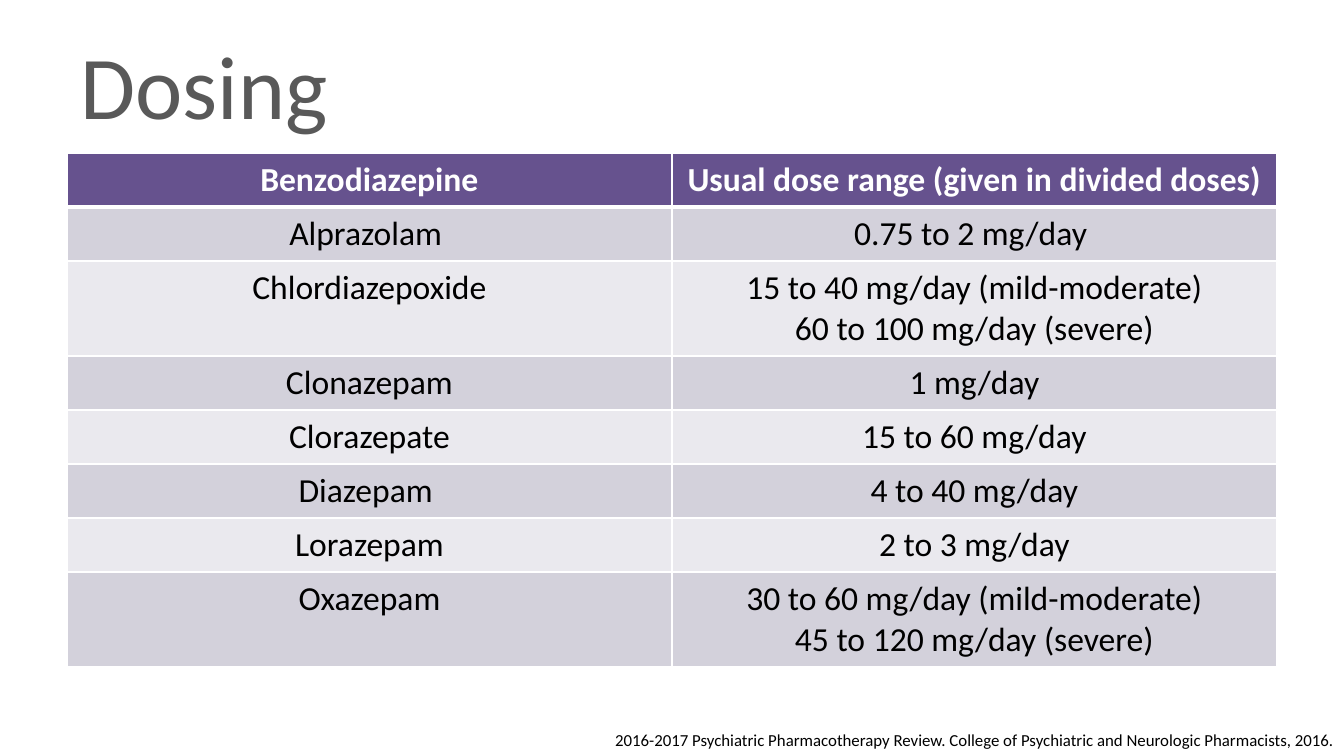
import pptx
import pptx.util
import pptx.dml.color
import pptx.enum.text
import pptx.oxml
import pptx.oxml.ns

RGBColor = pptx.dml.color.RGBColor
WHITE = RGBColor(0xFF, 0xFF, 0xFF)
BLACK = RGBColor(0, 0, 0)
GRAY = RGBColor(0x59, 0x59, 0x59)
PURPLE = RGBColor(0x66, 0x52, 0x8E)
BANDS = RGBColor(0xD3, 0xD1, 0xDB), RGBColor(0xEA, 0xE9, 0xEE)

SCALE = 914400 / 134.4
CENTER = pptx.enum.text.PP_ALIGN.CENTER
BOTTOM = pptx.enum.text.MSO_ANCHOR.BOTTOM
LINE, PAD = 41, 13

DOSES = [
    ("Benzodiazepine", "Usual dose range (given in divided doses)"),
    ("Alprazolam ", "0.75 to 2 mg/day "),
    ("Chlordiazepoxide",
     "15 to 40 mg/day (mild-moderate)\n60 to 100 mg/day (severe)"),
    ("Clonazepam", "1 mg/day"),
    ("Clorazepate", "15 to 60 mg/day"),
    ("Diazepam ", "4 to 40 mg/day"),
    ("Lorazepam", "2 to 3 mg/day"),
    ("Oxazepam",
     "30 to 60 mg/day (mild-moderate)\n45 to 120 mg/day (severe)"),
]
SOURCE = ("2016-2017 Psychiatric Pharmacotherapy Review. "
          "College of Psychiatric and Neurologic Pharmacists, 2016.")


def px(*sizes):
    return [pptx.util.Emu(round(size * SCALE)) for size in sizes]


def apply(target, values):
    for name, value in values.items():
        setattr(target, name, value)


def lines(row):
    """Count the lines of the tallest cell."""
    return max(text.count("\n") + 1 for text in row)


class Deck:
    font = "Calibri"

    def __init__(self, width, height):
        self.file = pptx.Presentation()
        self.file.slide_width, self.file.slide_height = px(width, height)
        self.slide = self.file.slides.add_slide(self.file.slide_layouts[6])

    def fill(self, frame, text, size, color, bold=False, **style):
        """Put styled text into a text frame."""
        frame.text = text
        for para in frame.paragraphs:
            apply(para, style)
            for run in para.runs:
                apply(run.font, {"name": self.font, "bold": bold,
                                 "size": pptx.util.Pt(size)})
                run.font.color.rgb = color

    def text(self, box, text, size, color, frame, **style):
        area = self.slide.shapes.add_textbox(*px(*box)).text_frame
        apply(area, frame)
        self.fill(area, text, size, color, **style)

    def border(self, cell, side, width):
        props = cell._tc.get_or_add_tcPr()
        props.append(pptx.oxml.parse_xml(
            f'<a:ln{side} {pptx.oxml.ns.nsdecls("a")} '
            f'w="{pptx.util.Pt(width)}"><a:solidFill>'
            f'<a:srgbClr val="{WHITE}"/></a:solidFill></a:ln{side}>'))

    def table(self, left, top, width, rows):
        """Add a table with a dark head row and banded body rows."""
        tall = [LINE * lines(row) + PAD for row in rows]
        cols = len(rows[0])
        grid = self.slide.shapes.add_table(
            len(rows), cols, *px(left, top, width, sum(tall))).table
        for col in grid.columns:
            col.width = px(width / cols)[0]
        for r, row in enumerate(rows):
            grid.rows[r].height = px(tall[r])[0]
            head = r == 0
            for c, text in enumerate(row):
                cell = grid.cell(r, c)
                for side in "LRTB":
                    thick = (head and side == "B") or (r == 1 and side == "T")
                    self.border(cell, side, 3 if thick else 1)
                cell.fill.solid()
                cell.fill.fore_color.rgb = PURPLE if head else BANDS[(r - 1) % 2]
                self.fill(cell.text_frame, text, 18,
                          WHITE if head else BLACK, head, alignment=CENTER)


def main():
    deck = Deck(1344, 756)
    deck.text((67, 46, 1210, 95), "Dosing", 48, GRAY,
              {"word_wrap": True, "vertical_anchor": BOTTOM}, line_spacing=0.7)
    deck.table(67, 153, 1210, DOSES)
    deck.text((602, 723, 841, 34), SOURCE, 9, BLACK, {"word_wrap": True})
    deck.file.save("out.pptx")


if __name__ == "__main__":
    main()
